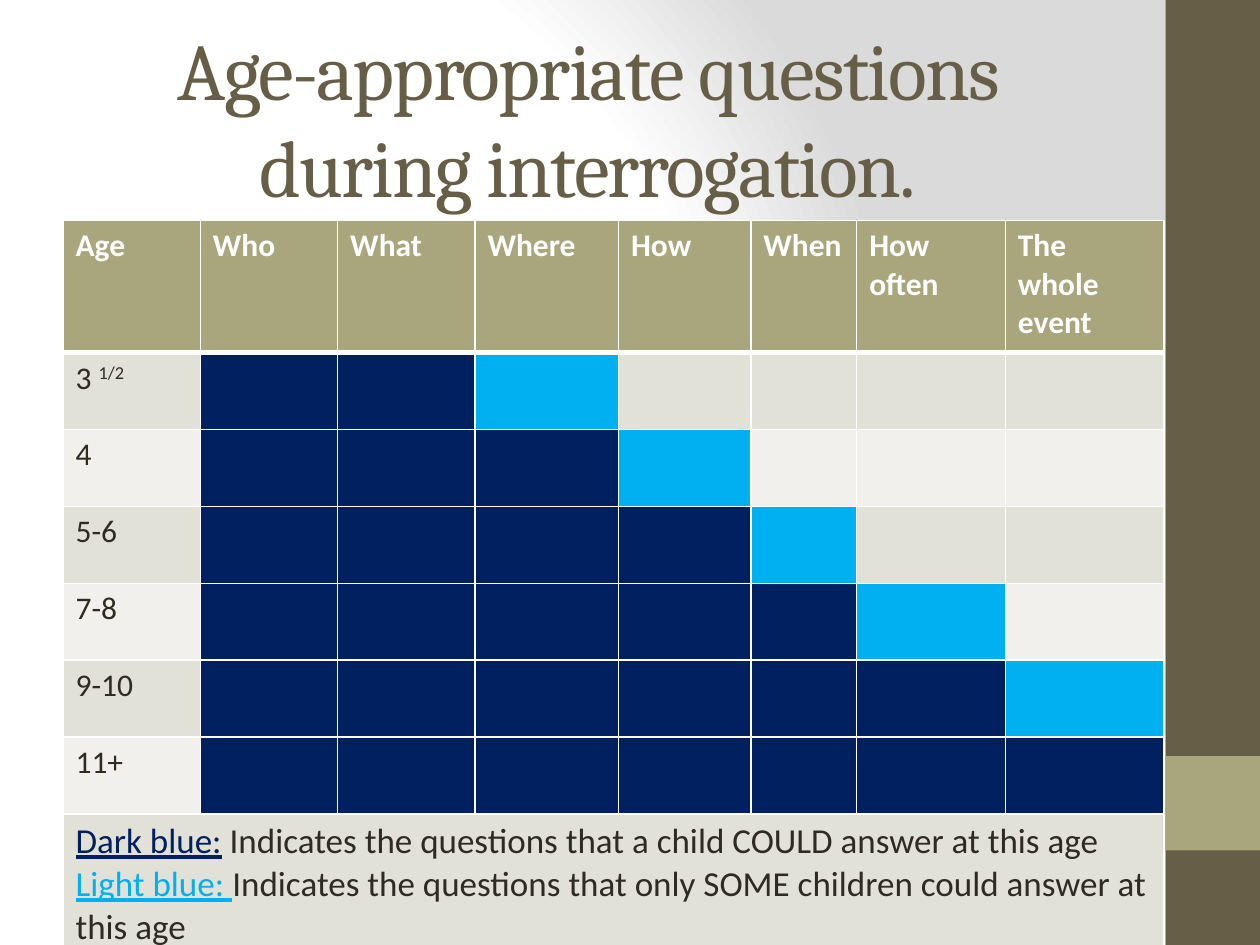
import dataclasses

import pptx
import pptx.dml.color
import pptx.enum.shapes
import pptx.enum.text
import pptx.oxml
import pptx.oxml.ns
import pptx.util

Inches = pptx.util.Inches


@dataclasses.dataclass(frozen=True)
class Theme:
    """Colours, fonts and type sizes of the deck."""

    brown: str = "675E47"
    olive: str = "A9A57C"
    ink: str = "2F2B20"
    white: str = "FFFFFF"
    grey: str = "DADADA"
    bands: tuple = ("E2E1D7", "F1F0EC")
    dark_blue: str = "002060"
    light_blue: str = "00B0F0"
    heading_font: str = "Cambria"
    body_font: str = "Calibri"
    title_size: int = 46
    cell_size: int = 18
    legend_size: int = 20


def rgb(color):
    """Return the colour object for a hex string."""
    return pptx.dml.color.RGBColor.from_string(color)


def add_span(para, text, *, font, size, color, bold=False, underline=False, **attributes):
    """Add formatted text to a paragraph, with extra run attributes."""
    span = para.add_run()
    span.text = text
    span.font.name = font
    span.font.size = pptx.util.Pt(size)
    span.font.color.rgb = rgb(color)
    span.font.bold = bold
    span.font.underline = underline
    for name, value in attributes.items():
        span.font._element.set(name, str(value))


class PageBuilder:
    """Holds the theme and the current page."""

    def __init__(self, page, theme):
        """Keep the page and its theme."""
        self.page = page
        self.theme = theme

    def background(self):
        """Fill the page with a radial gradient."""
        stops = ((0, self.theme.white), (75, self.theme.white), (100, self.theme.grey))
        marks = "".join(
            f'<a:gs pos="{place * 1000}"><a:srgbClr val="{color}"/></a:gs>' for place, color in stops
        )
        self.page._element.cSld.insert(0, pptx.oxml.parse_xml(
            f'<p:bg {pptx.oxml.ns.nsdecls("p", "a")}><p:bgPr><a:gradFill rotWithShape="1">'
            f'<a:gsLst>{marks}</a:gsLst><a:path path="circle">'
            '<a:fillToRect l="20000" t="50000" r="100000" b="50000"/></a:path>'
            '</a:gradFill><a:effectLst/></p:bgPr></p:bg>'
        ))

    def block(self, left, top, width, height, color):
        """Add a plain rectangle."""
        box = self.page.shapes.add_shape(
            pptx.enum.shapes.MSO_SHAPE.RECTANGLE,
            Inches(left), Inches(top), Inches(width), Inches(height),
        )
        box.shadow.inherit = False
        box.fill.solid()
        box.fill.fore_color.rgb = rgb(color)
        box.line.fill.background()

    def title(self, text, left, top, width, height):
        """Place and format the title."""
        box = self.page.shapes.title
        box.left, box.top, box.width, box.height = map(Inches, (left, top, width, height))
        frame = box.text_frame
        frame.word_wrap = True
        frame.auto_size = pptx.enum.text.MSO_AUTO_SIZE.NONE
        frame.vertical_anchor = pptx.enum.text.MSO_ANCHOR.MIDDLE
        para = frame.paragraphs[0]
        para.alignment = pptx.enum.text.PP_ALIGN.CENTER
        add_span(para, text, font=self.theme.heading_font, size=self.theme.title_size,
                 color=self.theme.brown, spc=-100)

    def table(self, left, top, widths, heights):
        """Add an empty table with the given columns and rows."""
        grid = self.page.shapes.add_table(
            len(heights), len(widths), Inches(left), Inches(top),
            Inches(sum(widths)), Inches(sum(heights)),
        ).table
        for column, width in zip(grid.columns, widths):
            column.width = Inches(width)
        for row, height in zip(grid.rows, heights):
            row.height = Inches(height)
        return grid

    def cell(self, cell, fill, top=1, bottom=1):
        """Fill a cell and rule its four sides in white."""
        cell.fill.solid()
        cell.fill.fore_color.rgb = rgb(fill)
        properties = cell._tc.get_or_add_tcPr()
        for index, (side, points) in enumerate((("L", 1), ("R", 1), ("T", top), ("B", bottom))):
            properties.insert(index, pptx.oxml.parse_xml(
                f'<a:ln{side} {pptx.oxml.ns.nsdecls("a")} w="{pptx.util.Pt(points)}"><a:solidFill>'
                f'<a:srgbClr val="{self.theme.white}"/></a:solidFill></a:ln{side}>'
            ))

    def cell_text(self, para, text, **changes):
        """Add cell text, in the standard format unless changed."""
        style = dict(font=self.theme.body_font, size=self.theme.cell_size, color=self.theme.ink)
        add_span(para, text, **{**style, **changes})


HEADINGS = ("Age", "Who", "What", "Where", "How", "When", "How often", "The whole event")
AGES = (("3 ", "1/2"), ("4",), ("5-6",), ("7-8",), ("9-10",), ("11+",))
WIDTHS = (1.09, 1.09, 1.09, 1.14, 1.05, 0.84, 1.18, 1.26)
HEIGHTS = (1.05, *[0.61] * len(AGES), 0.83)


def fill_question_table(builder):
    """Build the table of questions by age, with its legend."""
    theme = builder.theme
    grid = builder.table(0.5, 1.75, WIDTHS, HEIGHTS)
    for column, heading in enumerate(HEADINGS):
        cell = grid.cell(0, column)
        builder.cell(cell, theme.olive, bottom=3)
        builder.cell_text(cell.text_frame.paragraphs[0], heading, color=theme.white, bold=True)

    for row, age in enumerate(AGES, start=1):
        band = theme.bands[(row - 1) % 2]
        some_column = row + 2
        for column in range(len(HEADINGS)):
            if column == 0 or column > some_column:
                fill = band
            else:
                fill = theme.light_blue if column == some_column else theme.dark_blue
            builder.cell(grid.cell(row, column), fill, top=3 if row == 1 else 1)
        para = grid.cell(row, 0).text_frame.paragraphs[0]
        builder.cell_text(para, age[0])
        for fraction in age[1:]:
            builder.cell_text(para, fraction, baseline=30000)

    last = len(HEIGHTS) - 1
    for column in range(len(HEADINGS)):
        builder.cell(grid.cell(last, column), theme.bands[0])
    legend = grid.cell(last, 0)
    legend.merge(grid.cell(last, len(HEADINGS) - 1))
    entries = (
        ("Dark blue:", theme.dark_blue,
         " Indicates the questions that a child COULD answer at this age"),
        ("Light blue: ", theme.light_blue,
         "Indicates the questions that only SOME children could answer at this age"),
    )
    frame = legend.text_frame
    for index, (label, color, meaning) in enumerate(entries):
        para = frame.add_paragraph() if index else frame.paragraphs[0]
        builder.cell_text(para, label, size=theme.legend_size, color=color, underline=True)
        builder.cell_text(para, meaning, size=theme.legend_size)


def main():
    """Build and save the deck."""
    deck = pptx.Presentation()
    deck.slide_width, deck.slide_height = Inches(10), Inches(7.5)
    theme = Theme()
    builder = PageBuilder(deck.slides.add_slide(deck.slide_layouts[5]), theme)
    builder.background()
    builder.block(9.25, 0, 0.75, 7.5, theme.brown)
    builder.block(9.25, 6, 0.75, 0.75, theme.olive)
    builder.title("Age-appropriate questions during interrogation.", 0.5, 0.3, 8.33, 1.25)
    fill_question_table(builder)
    deck.save("out.pptx")


if __name__ == "__main__":
    main()
